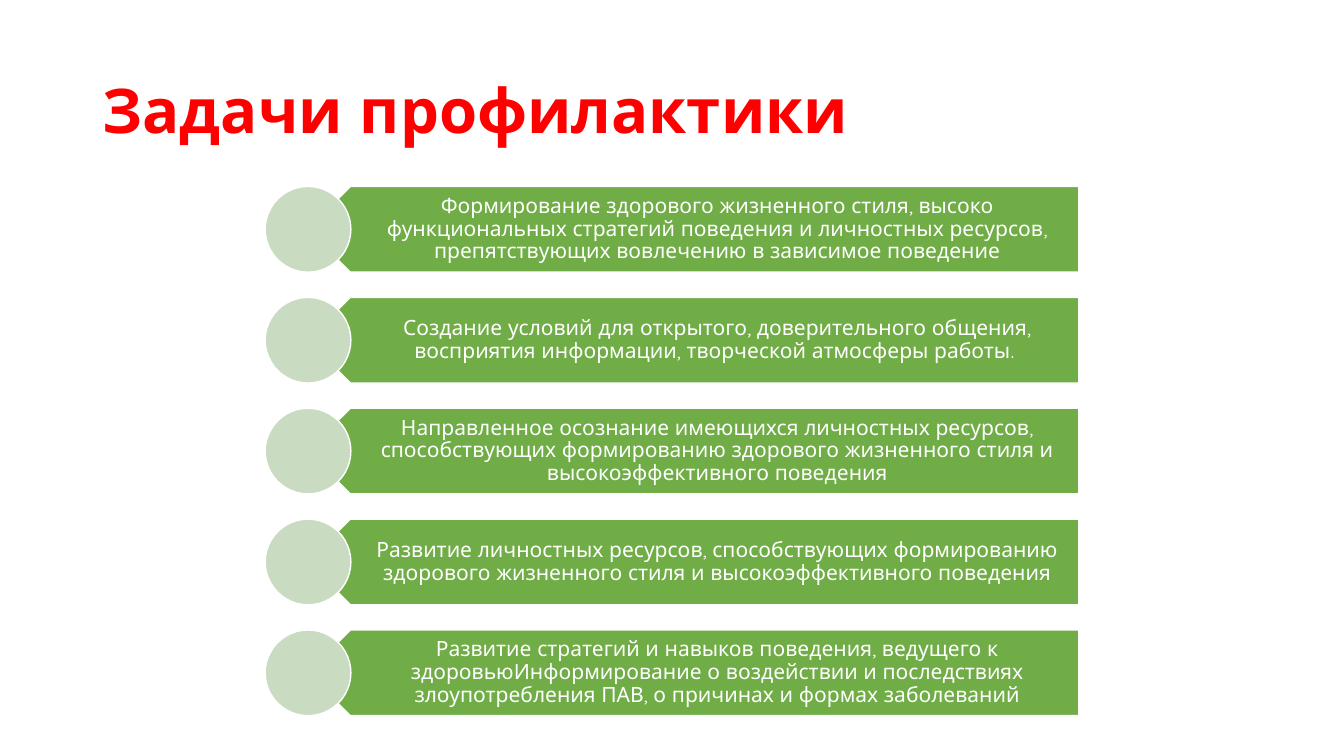
from dataclasses import dataclass

from pptx import Presentation
from pptx.dml.color import RGBColor
from pptx.enum.shapes import MSO_SHAPE as Preset
from pptx.enum.text import MSO_ANCHOR as Anchor, PP_ALIGN as Align
from pptx.util import Inches, Pt


@dataclass(frozen=True)
class Theme:
    font: str = "Quicksand"
    heading: RGBColor = RGBColor(0xFF, 0x00, 0x00)
    banner: RGBColor = RGBColor(0x70, 0xAD, 0x47)
    marker: RGBColor = RGBColor(0xC9, 0xDB, 0xC1)
    light: RGBColor = RGBColor(0xFF, 0xFF, 0xFF)
    heading_size: int = 44
    task_size: int = 15
    outline: int = 1


THEME = Theme()

FIRST_TOP = 1.85
ROW_STEP = 1.1
ROW_HEIGHT = 0.85
HEADING = "Задачи профилактики"
TASKS = [
    "Формирование здорового жизненного стиля, высоко функциональных стратегий "
    "поведения и личностных ресурсов, препятствующих вовлечению в зависимое поведение",
    "Создание условий для открытого, доверительного общения, восприятия информации, "
    "творческой атмосферы работы. ",
    "Направленное осознание имеющихся личностных ресурсов, способствующих "
    "формированию здорового жизненного стиля и высокоэффективного поведения",
    "Развитие личностных ресурсов, способствующих формированию здорового "
    "жизненного стиля и высокоэффективного поведения",
    "Развитие стратегий и навыков поведения, ведущего к здоровьюИнформирование "
    "о воздействии и последствиях злоупотребления ПАВ, о причинах и формах заболеваний",
]


def apply_format(target, values):
    for name, value in values.items():
        setattr(target, name, value)


def add_outlined(shapes, preset, left, top, width, fill, rotation=0):
    shape = shapes.add_shape(
        preset, Inches(left), Inches(top), Inches(width), Inches(ROW_HEIGHT)
    )
    shape.rotation = rotation
    shape.shadow.inherit = False
    shape.fill.solid()
    shape.fill.fore_color.rgb = fill
    shape.line.color.rgb = THEME.light
    shape.line.width = Pt(THEME.outline)


def add_text(shapes, text, box, size, color, align, bold=False, insets=(0.1, 0.05, 0.1, 0.05)):
    frame = shapes.add_textbox(*map(Inches, box)).text_frame
    left, top, right, bottom = map(Inches, insets)
    apply_format(frame, {
        "word_wrap": True,
        "vertical_anchor": Anchor.MIDDLE,
        "margin_left": left,
        "margin_top": top,
        "margin_right": right,
        "margin_bottom": bottom,
    })
    paragraph = frame.paragraphs[0]
    apply_format(paragraph, {"alignment": align, "line_spacing": 0.9})
    run = paragraph.add_run()
    run.text = text
    apply_format(run.font, {"name": THEME.font, "size": Pt(size), "bold": bold})
    run.font.color.rgb = color


def add_task(slide, task, top):
    row = slide.shapes.add_group_shape().shapes
    add_outlined(row, Preset.PENTAGON, 3.05, top, 7.65, THEME.banner, rotation=180)
    add_text(
        row, task, (3.27, top, 7.44, ROW_HEIGHT), THEME.task_size, THEME.light,
        Align.CENTER, insets=(0.37, 0.06, 0.12, 0.06),
    )
    add_outlined(row, Preset.OVAL, 2.63, top, ROW_HEIGHT, THEME.marker)


def main():
    deck = Presentation()
    apply_format(deck, {"slide_width": Inches(13.33), "slide_height": Inches(7.5)})
    slide = deck.slides.add_slide(deck.slide_layouts[6])
    add_text(
        slide.shapes, HEADING, (0.92, 0.4, 11.5, 1.45), THEME.heading_size,
        THEME.heading, Align.LEFT, bold=True,
    )
    for index, task in enumerate(TASKS):
        add_task(slide, task, FIRST_TOP + index * ROW_STEP)
    deck.save("out.pptx")


if __name__ == "__main__":
    main()
